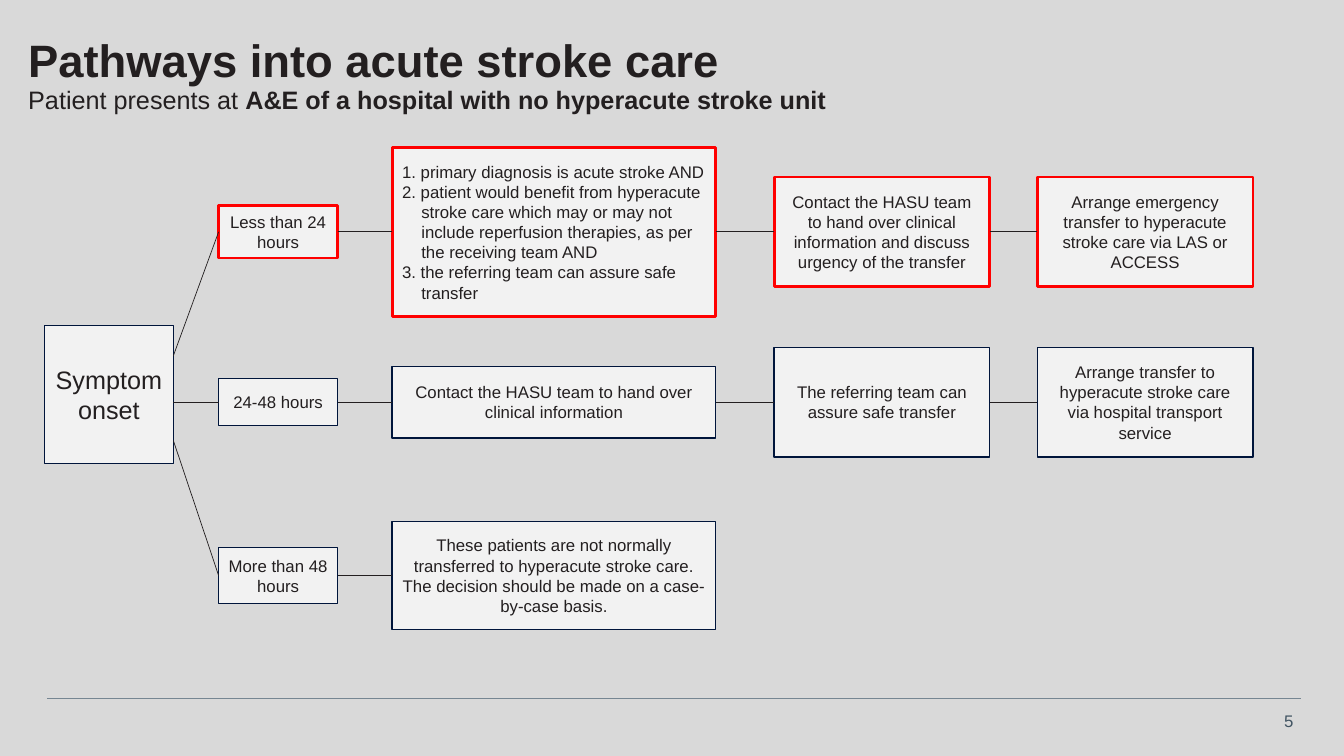
from dataclasses import dataclass
from typing import Any, NamedTuple

import lxml.etree
import pptx
import pptx.dml.color
import pptx.enum.shapes
import pptx.enum.text
import pptx.oxml.ns
import pptx.util

RGB = pptx.dml.color.RGBColor.from_string
ALIGN = pptx.enum.text.PP_ALIGN
ANCHOR = pptx.enum.text.MSO_ANCHOR
KIND = pptx.enum.shapes.MSO_SHAPE
STRAIGHT = pptx.enum.shapes.MSO_CONNECTOR.STRAIGHT
LEFT, RIGHT = 1, 3
WIDE, HIGH = pptx.util.Inches(13.333), pptx.util.Inches(7.5)


@dataclass(frozen=True)
class Theme:
    font: str = "Arial"
    back: str = "D9D9D9"
    fill: str = "F2F2F2"
    ink: str = "231F20"
    navy: str = "00153B"
    red: str = "FF0000"
    rule: str = "768692"
    slate: str = "425563"
    head: float = 32.4
    lead: float = 18
    text: float = 12
    thin: float = 0.5
    edge: float = 1
    bold: float = 2


class Col(NamedTuple):
    """Left edge and width, in percent of the slide's width."""
    left: float
    width: float


class Step(NamedTuple):
    """One box: its height in percent of the slide's height, and its text."""
    high: float
    lines: tuple[str, ...]
    listed: bool = False


class Route(NamedTuple):
    """One row of steps, and where its line leaves the onset box."""
    mid: float
    start: float
    urgent: bool
    steps: tuple[Step, ...]


THEME = Theme()
ONSET = Col(3.3, 9.6)
ONSET_MID = 52.2
COLS = (Col(16.27, 8.85), Col(29.18, 24.08), Col(57.6, 16.05), Col(77.18, 16.05))
INDENT = 1.43

ROUTES = (
    Route(30.67, 47.07, True, (
        Step(6.93, ("Less than 24 hours",)),
        Step(22.4, (
            "1. primary diagnosis is acute stroke AND",
            "2. patient would benefit from hyperacute stroke care which may or may not "
            "include reperfusion therapies, as per the receiving team AND",
            "3. the referring team can assure safe transfer"), listed=True),
        Step(14.53, ("Contact the HASU team to hand over clinical information "
                     "and discuss urgency of the transfer",)),
        Step(14.53, ("Arrange emergency transfer to hyperacute stroke care "
                     "via LAS or ACCESS",)))),
    Route(53.2, 53.2, False, (
        Step(6.27, ("24-48 hours",)),
        Step(9.47, ("Contact the HASU team to hand over clinical information",)),
        Step(14.53, ("The referring team can assure safe transfer",)),
        Step(14.53, ("Arrange transfer to hyperacute stroke care "
                     "via hospital transport service",)))),
    Route(76.13, 58.27, False, (
        Step(7.47, ("More than 48 hours",)),
        Step(14.27, ("These patients are not normally transferred to hyperacute stroke care. "
                     "The decision should be made on a case-by-case basis.",)))),
)


def across(share: float) -> int:
    return round(WIDE * share / 100)


def down(share: float) -> int:
    return round(HIGH * share / 100)


def put(thing: Any, form: dict[str, Any]) -> None:
    for name, value in form.items():
        setattr(thing, name, value)


def style(font: Any, size: float, tint: str = THEME.ink, bold: bool = False) -> None:
    put(font, {"name": THEME.font, "size": pptx.util.Pt(size), "bold": bold})
    font.color.rgb = RGB(tint)


def stroke(line: Any, tint: str, width: float) -> None:
    line.color.rgb = RGB(tint)
    line.width = pptx.util.Pt(width)


def add_box(slide: Any, col: Col, mid: float, step: Step, size: float, urgent: bool) -> Any:
    box = slide.shapes.add_shape(KIND.RECTANGLE, across(col.left), down(mid - step.high / 2),
                                 across(col.width), down(step.high))
    box.shadow.inherit = False
    box.fill.solid()
    box.fill.fore_color.rgb = RGB(THEME.fill)
    stroke(box.line, *((THEME.red, THEME.bold) if urgent else (THEME.navy, THEME.edge)))
    frame = box.text_frame
    put(frame, {"word_wrap": True, "vertical_anchor": ANCHOR.MIDDLE})
    frame.text = "\n".join(step.lines)
    for para in frame.paragraphs:
        para.alignment = ALIGN.LEFT if step.listed else ALIGN.CENTER
        if step.listed:
            props = para._p.get_or_add_pPr()
            props.set("marL", str(across(INDENT)))
            props.set("indent", str(-across(INDENT)))
        style(para.runs[0].font, size)
    return box


def add_line(slide: Any, left: float, top: float, right: float, low: float,
             tint: str = THEME.ink) -> Any:
    line = slide.shapes.add_connector(STRAIGHT, across(left), down(top),
                                      across(right), down(low))
    stroke(line.line, tint, THEME.thin)
    lxml.etree.SubElement(line._element.spPr, pptx.oxml.ns.qn("a:effectLst"))
    return line


def add_title(slide: Any) -> None:
    title = slide.shapes.title
    put(title, {"left": across(2.1), "top": down(5.07),
                "width": across(93.53), "height": down(9.47)})
    frame = title.text_frame
    put(frame, {"margin_left": 0, "margin_top": 0, "margin_right": 0, "margin_bottom": 0,
                "word_wrap": True, "vertical_anchor": ANCHOR.TOP,
                "auto_size": pptx.enum.text.MSO_AUTO_SIZE.NONE})
    para = frame.paragraphs[0]
    put(para, {"alignment": ALIGN.LEFT, "line_spacing": 0.9})
    parts = (("Pathways into acute stroke care", THEME.head, True),
             ("Patient presents at ", THEME.lead, False),
             ("A&E of a hospital with no hyperacute stroke unit", THEME.lead, True))
    for spot, (words, size, bold) in enumerate(parts):
        if spot == 1:
            para.add_line_break()
        run = para.add_run()
        run.text = words
        style(run.font, size, bold=bold)


def add_foot(slide: Any) -> None:
    add_line(slide, 3.53, 92.4, 96.83, 92.4, THEME.rule)
    box = slide.shapes.add_textbox(across(93.9), down(93.33), across(3.08), down(4))
    box.text_frame.word_wrap = True
    para = box.text_frame.paragraphs[0]
    para.alignment = ALIGN.RIGHT
    run = para.add_run()
    run.text = "5"
    style(run.font, THEME.text, THEME.slate)


def add_route(slide: Any, route: Route) -> None:
    last = None
    for col, step in zip(COLS, route.steps):
        box = add_box(slide, col, route.mid, step, THEME.text, route.urgent)
        line = add_line(slide, ONSET.left + ONSET.width, route.start, col.left, route.mid)
        if last is not None:
            line.begin_connect(last, RIGHT)
        line.end_connect(box, LEFT)
        last = box


def main() -> None:
    deck = pptx.Presentation()
    put(deck, {"slide_width": WIDE, "slide_height": HIGH})
    slide = deck.slides.add_slide(deck.slide_layouts.get_by_name("Title Only"))
    slide.background.fill.solid()
    slide.background.fill.fore_color.rgb = RGB(THEME.back)
    add_foot(slide)
    add_title(slide)
    add_box(slide, ONSET, ONSET_MID, Step(18.27, ("Symptom onset",)), THEME.lead, False)
    for route in ROUTES:
        add_route(slide, route)
    deck.save("out.pptx")


if __name__ == "__main__":
    main()
